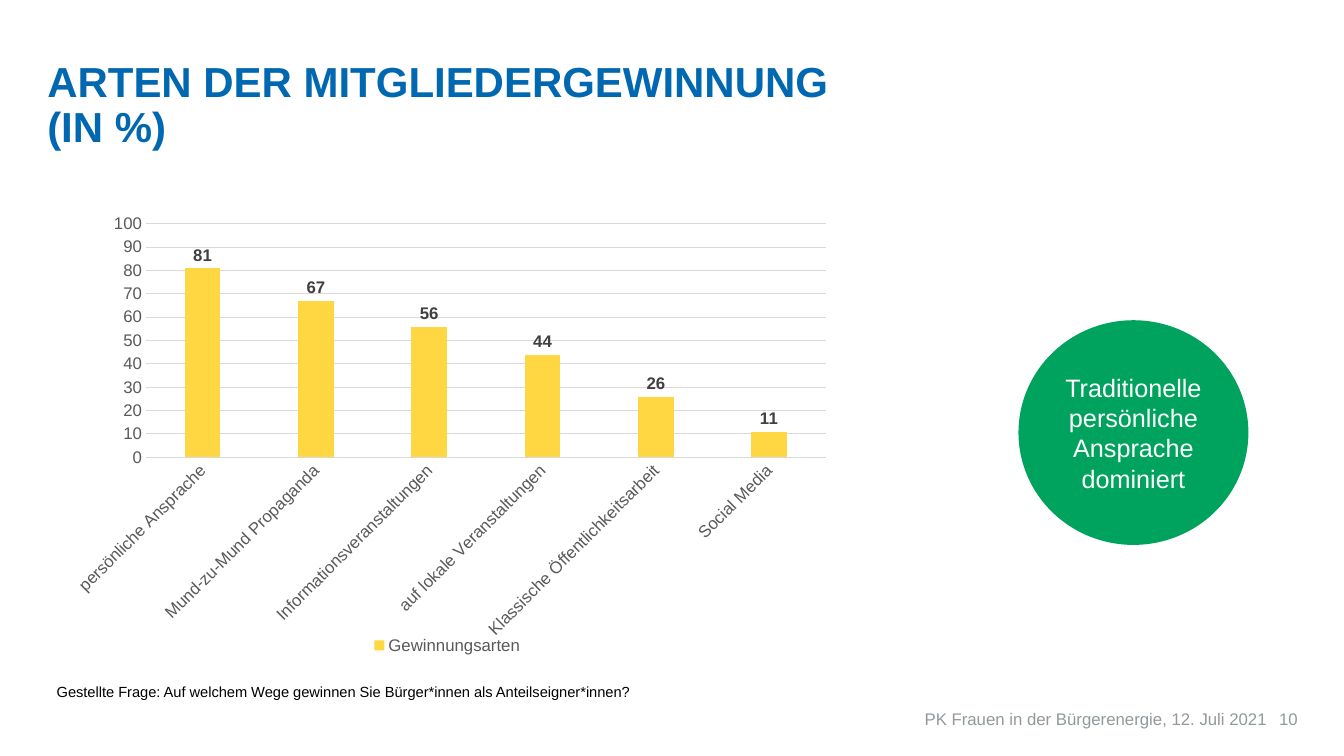
"""Builds the slide on how energy cooperatives win their members."""
from lxml import etree
from pptx import Presentation, util as u
from pptx.chart.data import CategoryChartData
from pptx.dml.color import RGBColor
from pptx.enum import chart as charts, shapes, text
from pptx.oxml import parse_xml
from pptx.oxml.ns import nsdecls, qn

BLUE = RGBColor(0x00, 0x67, 0xB1)
GREEN = RGBColor(0x00, 0xA3, 0x5D)
YELLOW = RGBColor(0xFF, 0xD7, 0x43)
WHITE = RGBColor(0xFF, 0xFF, 0xFF)
BLACK = RGBColor(0x00, 0x00, 0x00)
FOOTER_GREY = RGBColor(0x92, 0x99, 0x9C)
AXIS_GREY = RGBColor(0x59, 0x59, 0x59)
LABEL_GREY = RGBColor(0x40, 0x40, 0x40)
GRID_GREY = RGBColor(0xD9, 0xD9, 0xD9)

EMU_PER_PX = 9525
FONT = "Arial"

MEMBERS_WON_BY = {
    "persönliche Ansprache": 81,
    "Mund-zu-Mund Propaganda": 67,
    "Informationsveranstaltungen": 56,
    "auf lokale Veranstaltungen": 44,
    "Klassische Öffentlichkeitsarbeit": 26,
    "Social Media": 11,
}


def px(length):
    return u.Emu(length * EMU_PER_PX)


def style_font(font, size, color, bold=False):
    font.name = FONT
    font.size = u.Pt(size)
    font.bold = bold
    font.color.rgb = color


def write(shape, words, size=12, color=BLACK, bold=False, align=text.PP_ALIGN.LEFT,
          anchor=text.MSO_ANCHOR.TOP, inset=(0, 0), spacing=None):
    frame = shape.text_frame
    frame.word_wrap = True
    frame.auto_size = text.MSO_AUTO_SIZE.NONE
    frame.vertical_anchor = anchor
    frame.margin_left = frame.margin_right = px(inset[0])
    frame.margin_top = frame.margin_bottom = px(inset[1])
    paragraph = frame.paragraphs[0]
    paragraph.alignment = align
    if spacing:
        paragraph.line_spacing = u.Pt(spacing)
    run = paragraph.add_run()
    run.text = words
    style_font(run.font, size, color, bold)


def style_line(line, color, width=0.75):
    line.color.rgb = color
    line.width = u.Pt(width)


def place_plot(chart, **fractions):
    plot_area = chart._chartSpace.chart.plotArea
    for layout in plot_area.findall(qn("c:layout")):
        plot_area.remove(layout)
    layout = parse_xml(f"<c:layout {nsdecls('c')}><c:manualLayout/></c:layout>")
    settings = {"layoutTarget": "inner", "xMode": "edge", "yMode": "edge", **fractions}
    for name, value in settings.items():
        etree.SubElement(layout[0], qn(f"c:{name}")).set("val", str(value))
    plot_area.insert(0, layout)


class SlideBuilder:
    """Holds the current slide and draws its elements in the house style."""

    def __init__(self, presentation):
        self.slide = presentation.slides.add_slide(presentation.slide_layouts[5])

    def title(self, words, *box):
        shape = self.slide.shapes.title
        shape.left, shape.top, shape.width, shape.height = map(px, box)
        write(shape, words, size=30, color=BLUE, bold=True,
              anchor=text.MSO_ANCHOR.BOTTOM, spacing=32)

    def label(self, words, *box, **style):
        write(self.slide.shapes.add_textbox(*map(px, box)), words, **style)

    def circle(self, words, *box):
        shape = self.slide.shapes.add_shape(shapes.MSO_SHAPE.OVAL, *map(px, box))
        shape.shadow.inherit = False
        shape.fill.solid()
        shape.fill.fore_color.rgb = GREEN
        shape.line.fill.background()
        write(shape, words, size=18, color=WHITE, align=text.PP_ALIGN.CENTER,
              anchor=text.MSO_ANCHOR.MIDDLE, inset=(10, 5))

    def column_chart(self, name, values, *box):
        data = CategoryChartData(number_format="0")
        data.categories = list(values)
        data.add_series(name, list(values.values()))
        chart = self.slide.shapes.add_chart(
            charts.XL_CHART_TYPE.COLUMN_CLUSTERED, *map(px, box), data).chart
        style_font(chart.font, 10, BLACK)
        chart.has_title = False
        chart.has_legend = True
        chart.legend.position = charts.XL_LEGEND_POSITION.BOTTOM
        chart.legend.include_in_layout = False
        style_font(chart.legend.font, 12, AXIS_GREY)

        for axis in (chart.category_axis, chart.value_axis):
            axis.major_tick_mark = axis.minor_tick_mark = charts.XL_TICK_MARK.NONE
            style_font(axis.tick_labels.font, 12, AXIS_GREY)
        style_line(chart.category_axis.format.line, GRID_GREY)
        label_body = chart.category_axis._element.find(f"{qn('c:txPr')}/{qn('a:bodyPr')}")
        label_body.set("rot", str(-45 * 60000))
        label_body.set("vert", "horz")
        chart.value_axis.minimum_scale = 0
        chart.value_axis.maximum_scale = 100
        chart.value_axis.major_unit = 10
        chart.value_axis.format.line.fill.background()
        style_line(chart.value_axis.major_gridlines.format.line, GRID_GREY)

        plot = chart.plots[0]
        plot.vary_by_categories = False
        plot.gap_width = 219
        plot.overlap = -27
        series = plot.series[0]
        series.format.fill.solid()
        series.format.fill.fore_color.rgb = YELLOW
        labels = series.data_labels
        labels.show_value = True
        labels.position = charts.XL_LABEL_POSITION.OUTSIDE_END
        style_font(labels.font, 12, LABEL_GREY, bold=True)
        place_plot(chart, x=0.11, y=0.07, w=0.88, h=0.5)


def main():
    presentation = Presentation()
    presentation.slide_width, presentation.slide_height = px(1280), px(720)
    builder = SlideBuilder(presentation)
    footer = {"color": FOOTER_GREY, "align": text.PP_ALIGN.RIGHT}
    builder.label("PK Frauen in der Bürgerenergie, 12. Juli 2021", 699, 675, 508, 19, **footer)
    builder.label("10", 1207, 675, 29, 19, **footer)
    builder.title("ARTEN DER MITGLIEDERGEWINNUNG (IN %)", 45, 60, 775, 84)
    builder.column_chart("Gewinnungsarten", MEMBERS_WON_BY, 58, 182, 736, 445)
    builder.circle("Traditionelle persönliche Ansprache dominiert", 970, 305, 219, 214)
    builder.label("Gestellte Frage: Auf welchem Wege gewinnen Sie Bürger*innen als Anteilseigner*innen?",
                  44, 645, 802, 27, size=10.5, inset=(10, 5))
    presentation.save("out.pptx")


if __name__ == "__main__":
    main()
